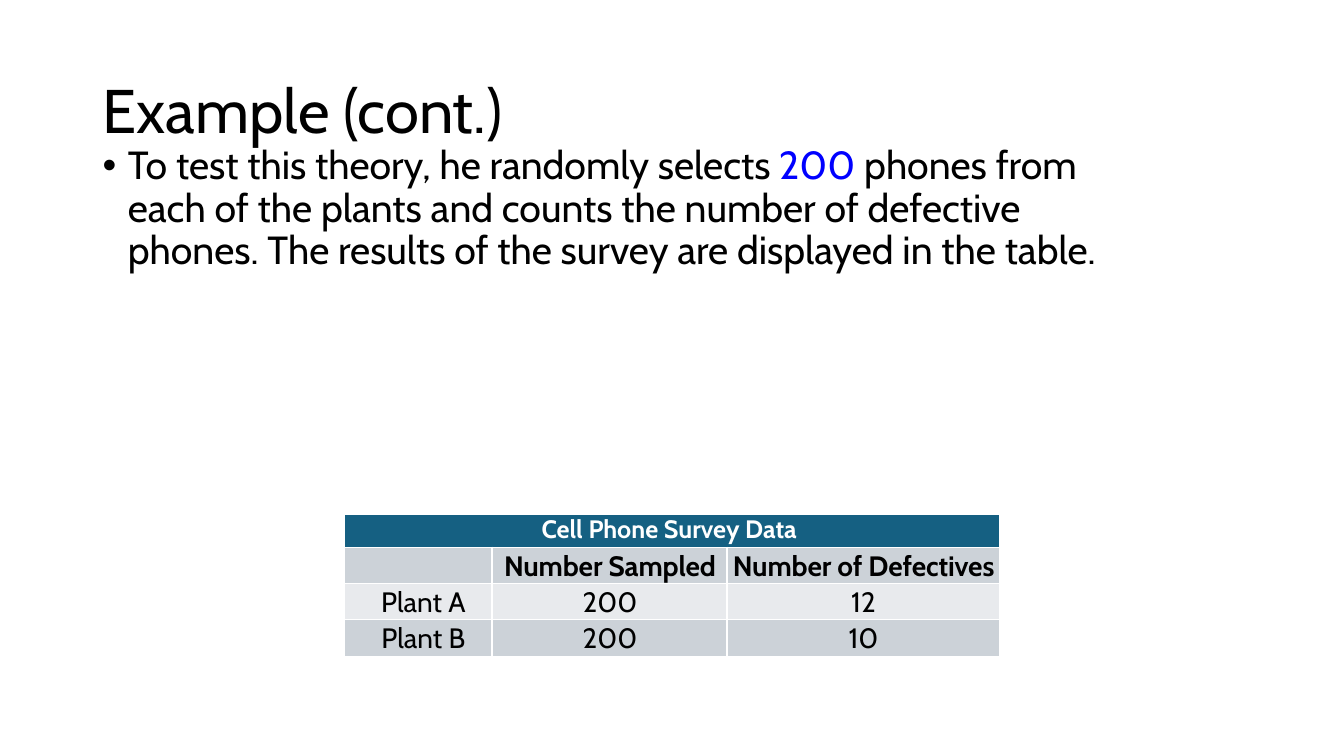
"""Build the cell phone survey example slide."""
from lxml import etree
from pptx import Presentation
from pptx.dml.color import RGBColor
from pptx.enum.text import MSO_ANCHOR, PP_ALIGN
from pptx.oxml.ns import qn
from pptx.util import Inches, Pt

CENTER, LEFT = PP_ALIGN.CENTER, PP_ALIGN.LEFT
TOP, MIDDLE = MSO_ANCHOR.TOP, MSO_ANCHOR.MIDDLE
FONT = "Cabin"
BLACK, WHITE, BLUE = "000000", "FFFFFF", "0000FF"
HEADER_FILL, DARK_BAND, LIGHT_BAND = "156082", "CCD2D8", "E8EAED"

TITLE = "Example (cont.)"
BODY = [
    ("To test this theory, he randomly selects ", BLACK),
    ("200", BLUE),
    (" phones from each of the plants and counts the number of defective phones. "
     "The results of the survey are displayed in the table.", BLACK),
]
ROWS = [
    ("Cell Phone Survey Data ", "", ""),
    ("", "Number Sampled", "Number of Defectives"),
    ("Plant A", "200", "12"),
    ("Plant B", "200", "10"),
]
ROW_FILLS = [HEADER_FILL, DARK_BAND, LIGHT_BAND, DARK_BAND]
ROW_HEIGHTS = [0.33, 0.36, 0.36, 0.36]
COLUMN_WIDTHS = [1.46, 2.33, 2.7]
TABLE_LEFT, TABLE_TOP = 3.42, 5.1


def color(value):
    return RGBColor.from_string(value)


def format_font(font, size, value, bold=False):
    font.name, font.size, font.bold = FONT, Pt(size), bold
    font.color.rgb = color(value)


def place(shape, left, top, width, height):
    shape.left, shape.top = Inches(left), Inches(top)
    shape.width, shape.height = Inches(width), Inches(height)


def add_title(slide):
    title = slide.shapes.title
    place(title, 0.92, 0.4, 11.5, 1.45)
    frame = title.text_frame
    frame.text = TITLE
    frame.word_wrap = True
    frame.vertical_anchor = MIDDLE
    paragraph = frame.paragraphs[0]
    paragraph.alignment, paragraph.line_spacing = LEFT, 0.9
    format_font(paragraph.runs[0].font, 44, BLACK)


def add_body(slide):
    box = slide.shapes.add_textbox(Inches(0.92), Inches(1.4), Inches(10.25), Inches(2.97))
    frame = box.text_frame
    frame.word_wrap = True
    frame.vertical_anchor = TOP
    paragraph = frame.paragraphs[0]
    paragraph.line_spacing, paragraph.space_before = 0.9, Pt(10)
    for text, value in BODY:
        run = paragraph.add_run()
        run.text = text
        format_font(run.font, 28, value)
    properties = paragraph._p.get_or_add_pPr()
    properties.set("marL", str(Inches(0.25)))
    properties.set("indent", str(Inches(-0.25)))
    etree.SubElement(properties, qn("a:buFont")).set("typeface", "Arial")
    etree.SubElement(properties, qn("a:buChar")).set("char", "•")


def add_borders(cell):
    properties = cell._tc.get_or_add_tcPr()
    for index, side in enumerate("LRTB"):
        line = etree.Element(qn(f"a:ln{side}"), w=str(Pt(1)))
        fill = etree.SubElement(line, qn("a:solidFill"))
        etree.SubElement(fill, qn("a:srgbClr")).set("val", WHITE)
        properties.insert(index, line)


def format_cell(cell, text, row, column):
    cell.fill.solid()
    cell.fill.fore_color.rgb = color(ROW_FILLS[row])
    cell.margin_left = cell.margin_right = cell.margin_bottom = 0
    cell.margin_top = Inches(0.02 if row else 0)
    add_borders(cell)
    paragraph = cell.text_frame.paragraphs[0]
    paragraph.alignment = CENTER
    if row:
        paragraph.space_before = Pt(1.5 if row == 1 else 1.2)
        indent = 0.01 if column else 0.1
        paragraph._p.get_or_add_pPr().set("marL", str(Inches(indent)))
    size, value = (20, BLACK) if row else (18, WHITE)
    if text:
        paragraph.text = text
        format_font(paragraph.runs[0].font, size, value, row < 2)
        if row == 1:
            paragraph.runs[0].font._element.set("spc", "-10")
    else:
        format_font(paragraph.font, size, value)


def add_survey_table(slide):
    table = slide.shapes.add_table(
        len(ROWS), len(COLUMN_WIDTHS), Inches(TABLE_LEFT), Inches(TABLE_TOP),
        Inches(sum(COLUMN_WIDTHS)), Inches(sum(ROW_HEIGHTS))).table
    for column, width in zip(table.columns, COLUMN_WIDTHS):
        column.width = Inches(width)
    for row, height in zip(table.rows, ROW_HEIGHTS):
        row.height = Inches(height)
    for row, texts in enumerate(ROWS):
        for column, text in enumerate(texts):
            format_cell(table.cell(row, column), text, row, column)
    table.cell(0, 0).merge(table.cell(0, len(COLUMN_WIDTHS) - 1))


def main():
    presentation = Presentation()
    presentation.slide_width, presentation.slide_height = Inches(13.33), Inches(7.5)
    slide = presentation.slides.add_slide(presentation.slide_layouts[5])
    add_title(slide)
    add_body(slide)
    add_survey_table(slide)
    presentation.save("out.pptx")


if __name__ == "__main__":
    main()
